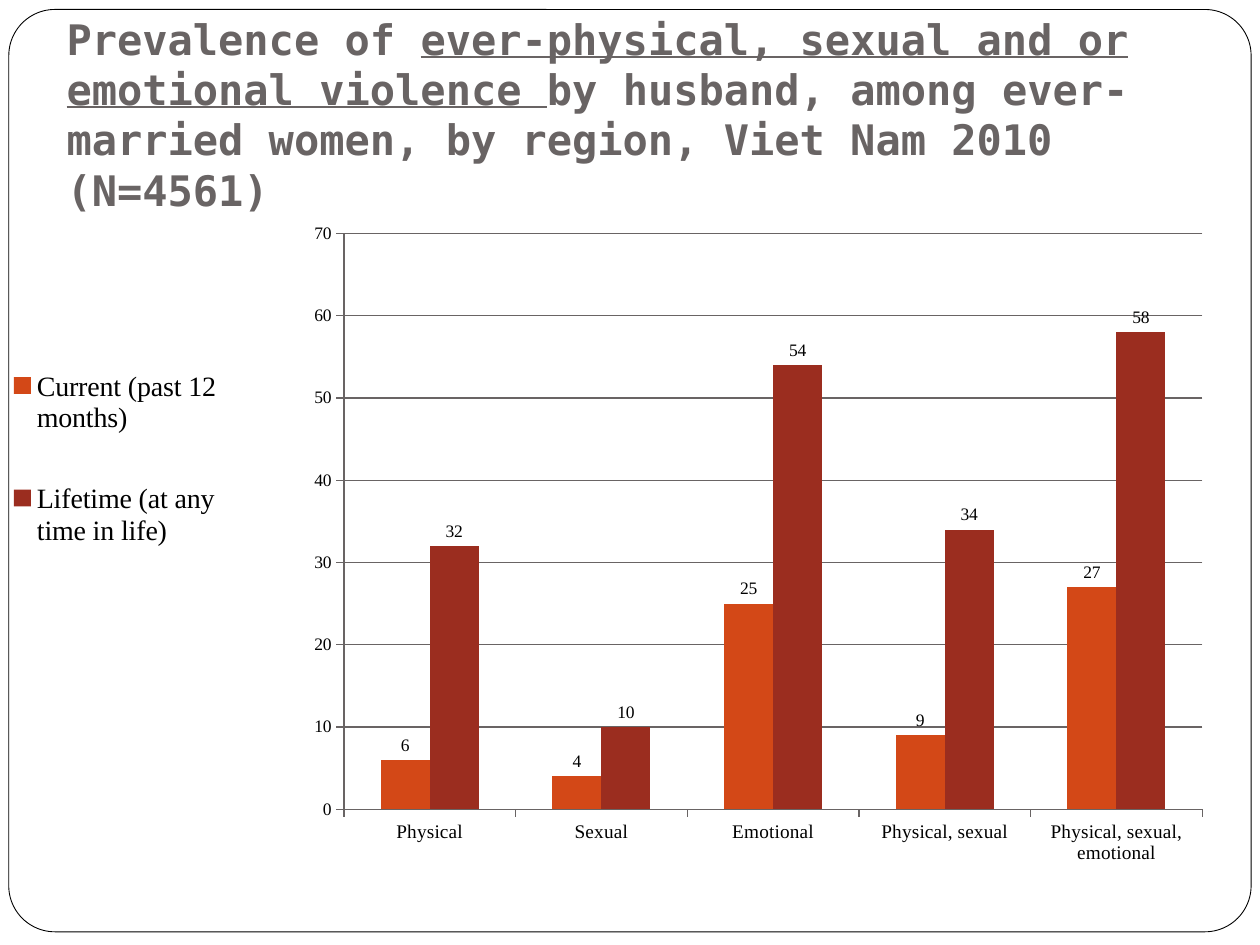
import pptx
import pptx.util
import pptx.chart.data
import pptx.dml.color
import pptx.enum.chart
import pptx.enum.shapes
import pptx.enum.text
import pptx.oxml
import pptx.oxml.ns

RGBColor = pptx.dml.color.RGBColor
Pt = pptx.util.Pt
WHITE = RGBColor(0xFF, 0xFF, 0xFF)
BLACK = RGBColor(0, 0, 0)
GREY = RGBColor(0x69, 0x64, 0x64)
ORANGE = RGBColor(0xD3, 0x48, 0x17)
RED = RGBColor(0x9B, 0x2D, 0x1F)

TITLE = [
    ("Prevalence of ", False),
    ("ever-physical, sexual and or emotional violence ", True),
    ("by husband, among ever-married women, by region, Viet Nam 2010 (N=4561)", False),
]
CATEGORIES = ["Physical", "Sexual", "Emotional", "Physical, sexual",
              "Physical, sexual, emotional"]
SERIES = [
    ("Current (past 12 months)", (6, 4, 25, 9, 27), ORANGE),
    ("Lifetime (at any time in life)", (32, 10, 54, 34, 58), RED),
]


class Deck:
    title_font = "DejaVu Sans Mono"
    chart_font = "Times New Roman"

    def __init__(self, width, height):
        self.prs = pptx.Presentation()
        self.prs.slide_width = pptx.util.Inches(width)
        self.prs.slide_height = pptx.util.Inches(height)
        self.s = self.prs.slides.add_slide(self.prs.slide_layouts[6])

    def box(self, x, y, w, h):
        sw, sh = self.prs.slide_width, self.prs.slide_height
        return [int(v) for v in (x * sw, y * sh, w * sw, h * sh)]

    def frame(self, *share):
        sp = self.s.shapes.add_shape(
            pptx.enum.shapes.MSO_SHAPE.ROUNDED_RECTANGLE, *self.box(*share))
        sp.adjustments[0] = 0.05
        sp.shadow.inherit = False
        sp.fill.solid()
        sp.fill.fore_color.rgb = WHITE
        sp.line.color.rgb = BLACK
        sp.line.width = Pt(0.5)

    def title(self, runs, *share):
        tf = self.s.shapes.add_textbox(*self.box(*share)).text_frame
        tf.word_wrap = True
        tf.vertical_anchor = pptx.enum.text.MSO_ANCHOR.MIDDLE
        p = tf.paragraphs[0]
        p.font.name = self.title_font
        p.font.size = Pt(24)
        p.font.bold = True
        p.font.color.rgb = GREY
        for text, underline in runs:
            r = p.add_run()
            r.text = text
            r.font.underline = underline

    def place(self, element, x, y, w, h, inner=False):
        for old in element.findall(pptx.oxml.ns.qn("c:layout")):
            element.remove(old)
        target = '<c:layoutTarget val="inner"/>' if inner else ""
        layout = pptx.oxml.parse_xml(
            f'<c:layout {pptx.oxml.ns.nsdecls("c")}><c:manualLayout>{target}'
            '<c:xMode val="edge"/><c:yMode val="edge"/>'
            f'<c:x val="{x}"/><c:y val="{y}"/><c:w val="{w}"/><c:h val="{h}"/>'
            '</c:manualLayout></c:layout>')
        element.insert(0 if inner else 1, layout)

    def columns(self, categories, series, *share):
        data = pptx.chart.data.CategoryChartData()
        data.categories = categories
        for name, values, _ in series:
            data.add_series(name, values)
        chart = self.s.shapes.add_chart(
            pptx.enum.chart.XL_CHART_TYPE.COLUMN_CLUSTERED,
            *self.box(*share), data).chart
        chart.has_title = False
        chart.font.name = self.chart_font
        chart.font.size = Pt(10)
        chart.font.color.rgb = BLACK
        plot = chart.plots[0]
        plot.vary_by_categories = False
        plot.gap_width = 150
        plot.overlap = 0
        for item, (_, _, color) in zip(plot.series, series):
            item.format.fill.solid()
            item.format.fill.fore_color.rgb = color
            labels = item.data_labels
            labels.show_value = True
            labels.position = pptx.enum.chart.XL_LABEL_POSITION.OUTSIDE_END
        values = chart.value_axis
        values.minimum_scale, values.maximum_scale = 0, 70
        values.major_unit = 10
        values.major_gridlines.format.line.color.rgb = GREY
        for axis in (values, chart.category_axis):
            axis.major_tick_mark = pptx.enum.chart.XL_TICK_MARK.OUTSIDE
            axis.format.line.color.rgb = GREY
        chart.category_axis.tick_labels.font.size = Pt(11)
        chart.has_legend = True
        legend = chart.legend
        legend.position = pptx.enum.chart.XL_LEGEND_POSITION.RIGHT
        legend.include_in_layout = False
        legend.font.size = Pt(16)
        self.place(legend._element, 0, 0.18, 0.19, 0.39)
        plot_area = chart._chartSpace.chart.plotArea
        self.place(plot_area, 0.284, 0.054, 0.709, 0.819, inner=True)


def main():
    deck = Deck(10, 7.5)
    deck.frame(0.007, 0.01, 0.986, 0.976)
    deck.columns(CATEGORIES, SERIES, 0, 0.207, 0.961, 0.744)
    deck.title(TITLE, 0.043, 0.037, 0.9, 0.167)
    deck.prs.save("out.pptx")


if __name__ == "__main__":
    main()
